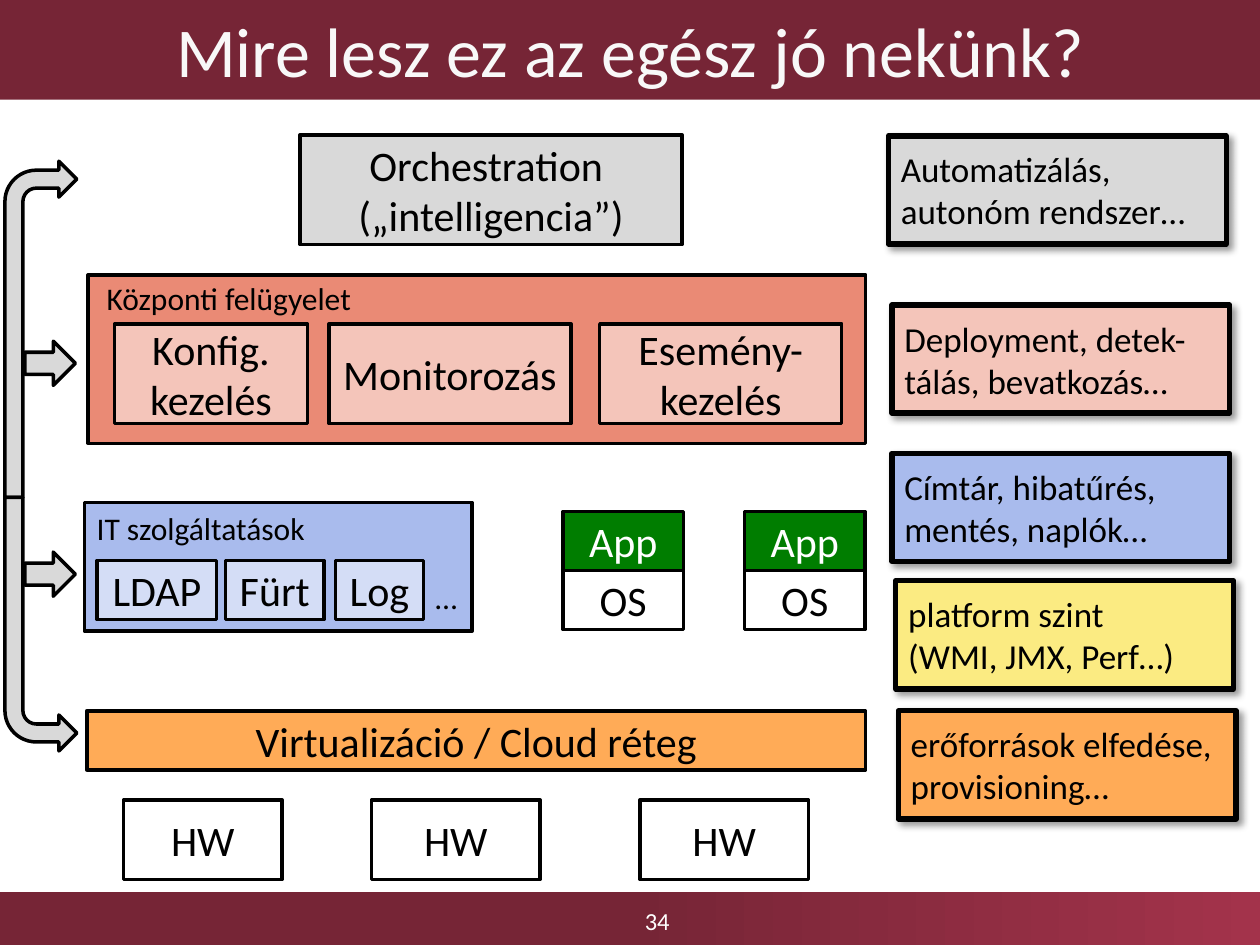
from lxml import etree
from pptx import Presentation
from pptx import util as u
from pptx.dml.color import RGBColor
from pptx.enum import shapes, text

RECT = shapes.MSO_SHAPE.RECTANGLE
CENTER, LEFT = text.PP_ALIGN.CENTER, text.PP_ALIGN.LEFT
MIDDLE, TOP = text.MSO_ANCHOR.MIDDLE, text.MSO_ANCHOR.TOP
BLACK, WHITE, WINE, GREEN, GREY = "000000", "FFFFFF", "762536", "007D00", "D9D9D9"
ROSE, BLUE, PALE_BLUE, ORANGE = "F4C5BA", "A9BBED", "D4DDF6", "FFAB57"
SHADOW = (
    '<a:effectLst xmlns:a="http://schemas.openxmlformats.org/drawingml/2006/main">'
    '<a:outerShdw blurRad="50800" dist="38100" dir="2700000" algn="tl">'
    '<a:srgbClr val="000000"><a:alpha val="40000"/></a:srgbClr>'
    '</a:outerShdw></a:effectLst>'
)


def paint(fill, colour):
    fill.solid()
    fill.fore_color.rgb = RGBColor.from_string(colour)


def write(shape, words, size, colour, align, anchor):
    frame = shape.text_frame
    frame.text = words
    frame.word_wrap = True
    frame.vertical_anchor = anchor
    for para in frame.paragraphs:
        para.alignment = align
        for span in para.runs:
            span.font.name = "Calibri"
            span.font.size = u.Pt(size)
            paint(span.font.fill, colour)


deck = Presentation()
deck.slide_width, deck.slide_height = u.Cm(25.4), u.Cm(19.05)
page = deck.slides.add_slide(deck.slide_layouts[5])

band = page.shapes.add_shape(RECT, 0, u.Cm(17.98), u.Cm(25.4), u.Cm(1.07))
band.shadow.inherit = False
band.line.fill.background()
band.fill.gradient()
band.fill.gradient_angle = 0
for stop, position, colour in zip(band.fill.gradient_stops, (0.5, 1), (WINE, "A3334B")):
    stop.position = position
    stop.color.rgb = RGBColor.from_string(colour)

title = page.shapes.title
title.left, title.top, title.width, title.height = 0, 0, u.Cm(25.4), u.Cm(2.01)
paint(title.fill, WINE)
write(title, "Mire lesz ez az egész jó nekünk?", 40, "F8F8F8", CENTER, MIDDLE)

boxes = [
    (1.78, 5.54, 15.67, 3.4, "EA8A75", ""),
    (1.7, 10.13, 7.82, 2.59, BLUE, ""),
    (6.05, 2.72, 7.7, 2.21, GREY, "Orchestration \v(„intelligencia”)"),
    (1.75, 14.33, 15.7, 1.19, ORANGE, "Virtualizáció / Cloud réteg"),
]
for left, width, label in (
    (2.31, 3.89, "Konfig. kezelés"),
    (6.63, 4.88, "Monitorozás"),
    (12.09, 4.88, "Esemény-kezelés"),
):
    boxes.append((left, 6.53, width, 2.01, ROSE, label))
for left, width, label in ((1.96, 2.41, "LDAP"), (4.55, 1.98, "Fürt"), (6.76, 1.78, "Log")):
    boxes.append((left, 11.3, width, 1.19, PALE_BLUE, label))
for left in (11.35, 15.01):
    boxes.append((left, 11.5, 2.43, 1.19, WHITE, "OS"))
    boxes.append((left, 10.31, 2.43, 1.19, GREEN, "App"))
for left, width in ((2.49, 3.2), (7.49, 3.4), (12.9, 3.4)):
    boxes.append((left, 16.13, width, 1.6, WHITE, "HW"))

bent_arrows = [(0.1, 3.25, 1.45, 6.78, GREY, ""), (0.1, 10.03, 1.45, 5.11, GREY, "")]
side_arrows = [(0.5, top, 1.02, 0.89, GREY, "") for top in (6.88, 11.13)]
notes = [
    (left, top, 6.81, 2.18, colour, words)
    for left, top, colour, words in (
        (17.91, 2.74, GREY, "Automatizálás, \vautonóm rendszer…"),
        (17.98, 6.15, ROSE, "Deployment, detek-tálás, bevatkozás…"),
        (17.98, 9.14, BLUE, "Címtár, hibatűrés, mentés, naplók…"),
        (18.06, 11.71, "FBEB82", "platform szint\v(WMI, JMX, Perf…)"),
        (18.11, 14.33, ORANGE, "erőforrások elfedése,\nprovisioning…"),
    )
]

for kind, line_width, size, align, rows in (
    (RECT, 2, 24, CENTER, boxes),
    (shapes.MSO_SHAPE.BENT_ARROW, 2, 24, CENTER, bent_arrows),
    (shapes.MSO_SHAPE.RIGHT_ARROW, 2, 24, CENTER, side_arrows),
    (RECT, 3, 20, LEFT, notes),
):
    for left, top, width, height, colour, words in rows:
        box = page.shapes.add_shape(kind, u.Cm(left), u.Cm(top), u.Cm(width), u.Cm(height))
        paint(box.fill, colour)
        paint(box.line.fill, BLACK)
        box.line.width = u.Pt(line_width)
        if rows is notes:
            box._element.spPr.append(etree.fromstring(SHADOW))
        else:
            box.shadow.inherit = False
            box.text_frame.margin_left = box.text_frame.margin_right = u.Cm(0.1)
        if rows is bent_arrows and top > 10:
            box._element.spPr.xfrm.set("flipV", "1")
        if words:
            write(box, words, size, WHITE if colour == GREEN else BLACK, align, MIDDLE)

for left, top, width, words, size, colour, align, anchor in (
    (1.9, 5.51, 6.6, "Központi felügyelet", 18, BLACK, LEFT, TOP),
    (1.7, 10.13, 5.23, "IT szolgáltatások", 18, BLACK, LEFT, TOP),
    (8.53, 11.53, 1, "…", 18, BLACK, LEFT, TOP),
    (9.12, 18.06, 8.26, "34", 14, WHITE, CENTER, MIDDLE),
):
    label = page.shapes.add_textbox(u.Cm(left), u.Cm(top), u.Cm(width), u.Cm(1))
    write(label, words, size, colour, align, anchor)

deck.save("out.pptx")
